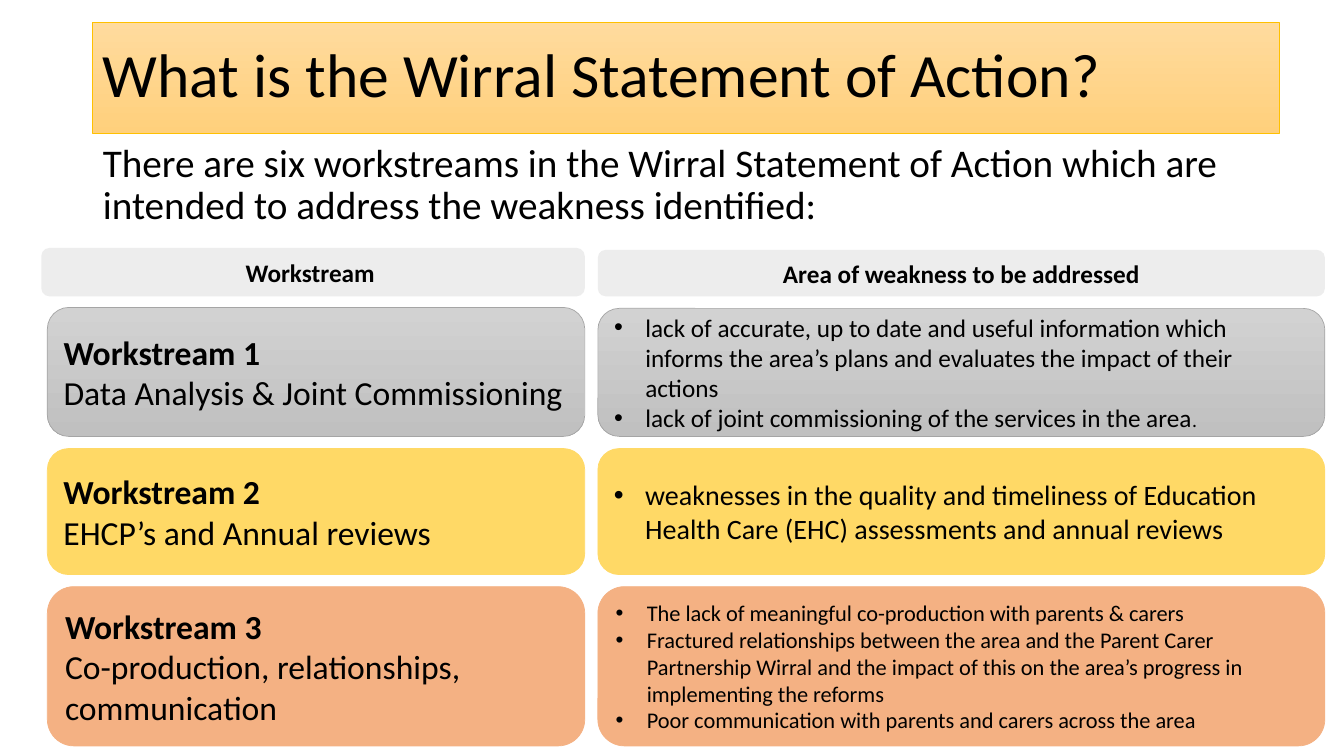
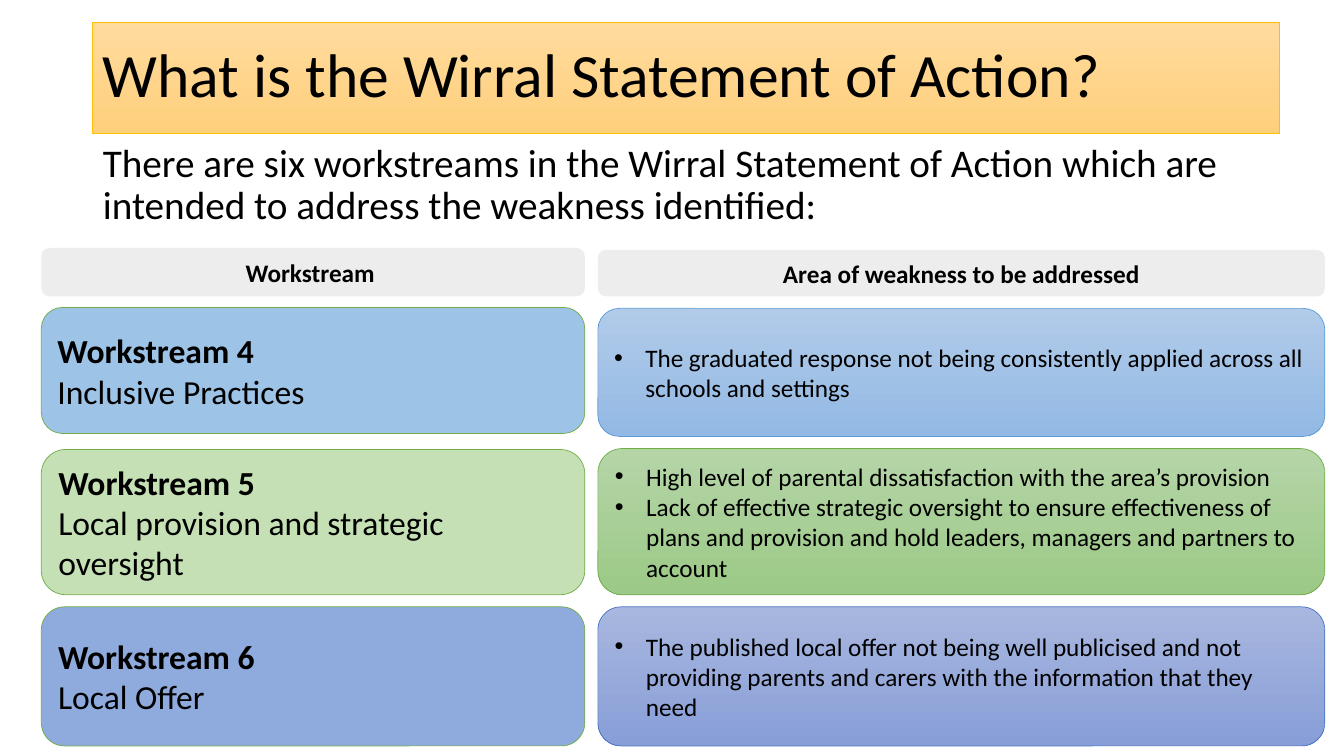
from dataclasses import dataclass

from lxml.etree import SubElement
from pptx import Presentation
from pptx.dml.color import RGBColor
from pptx.enum.shapes import MSO_SHAPE
from pptx.enum.text import MSO_ANCHOR, MSO_AUTO_SIZE, PP_ALIGN
from pptx.oxml.ns import qn
from pptx.util import Emu, Pt

# Scale: 100 px to the inch
EMU_PER_PX = 9144
PAGE_WIDTH, PAGE_HEIGHT = 1333, 750

FONT = "Calibri"
BLACK = RGBColor(0x00, 0x00, 0x00)
HEADER_GREY = RGBColor(0xED, 0xED, 0xED)
TITLE_TOP = RGBColor(0xFF, 0xDB, 0x9E)
TITLE_BOTTOM = RGBColor(0xFF, 0xD0, 0x7C)
GOLD = RGBColor(0xFF, 0xC0, 0x00)
GREY_LIGHT = RGBColor(0xD2, 0xD2, 0xD2)
GREY_DARK = RGBColor(0xC0, 0xC0, 0xC0)
GREY_LINE = RGBColor(0xA5, 0xA5, 0xA5)
YELLOW = RGBColor(0xFF, 0xD9, 0x66)
ORANGE = RGBColor(0xF4, 0xB1, 0x83)
SKY = RGBColor(0x9D, 0xC3, 0xE6)
SKY_LIGHT = RGBColor(0xB1, 0xCB, 0xE9)
SKY_DARK = RGBColor(0x93, 0xB9, 0xE4)
SKY_LINE = RGBColor(0x5B, 0x9B, 0xD5)
GREEN = RGBColor(0xC5, 0xE0, 0xB4)
GREEN_LIGHT = RGBColor(0xB5, 0xD5, 0xA7)
GREEN_DARK = RGBColor(0x9C, 0xC9, 0x87)
GREEN_LINE = RGBColor(0x70, 0xAD, 0x47)
INDIGO = RGBColor(0x8F, 0xAA, 0xDC)
INDIGO_LIGHT = RGBColor(0xA8, 0xB7, 0xDF)
INDIGO_DARK = RGBColor(0x88, 0x9E, 0xD7)
INDIGO_LINE = RGBColor(0x44, 0x72, 0xC4)

TITLE = "What is the Wirral Statement of Action?"
INTRO = ("There are six workstreams in the Wirral Statement of Action which are "
         "intended to address the weakness identified:")

# Column edges
HEADER_LEFT = 41
NAME_RIGHT = 580
WEAKNESS_LEFT, WEAKNESS_RIGHT = 593, 1314
BULLET_INDENT = 31


@dataclass(frozen=True)
class Card:
    top: int
    bottom: int
    fill: tuple[RGBColor, ...]  # one colour is solid, two are a gradient
    line: RGBColor | None = None


@dataclass(frozen=True)
class Workstream:
    number: int
    name: str
    name_card: Card
    weakness_card: Card
    weaknesses: tuple[str, ...]
    size: int = 18
    small_ending: str = ""


@dataclass(frozen=True)
class Page:
    name_left: int
    workstreams: tuple[Workstream, ...]


GREY_FILL = (GREY_LIGHT, GREY_DARK)
YELLOW_CARD = Card(445, 570, (YELLOW,), YELLOW)
ORANGE_CARD = Card(582, 740, (ORANGE,), ORANGE)
NAME_HEADER = Card(246, 294, (HEADER_GREY,))
WEAKNESS_HEADER = Card(248, 294, (HEADER_GREY,))

PAGES = (
    Page(47, (
        Workstream(
            1, "Data Analysis & Joint Commissioning",
            Card(305, 433, GREY_FILL, GREY_LINE), Card(306, 433, GREY_FILL, GREY_LINE),
            ("lack of accurate, up to date and useful information which informs the "
             "area’s plans and evaluates the impact of their actions",
             "lack of joint commissioning of the services in the area"),
            small_ending="."),
        Workstream(
            2, "EHCP’s and Annual reviews", YELLOW_CARD, YELLOW_CARD,
            ("weaknesses in the quality and timeliness of Education Health Care (EHC) "
             "assessments and annual reviews",),
            size=20),
        Workstream(
            3, "Co-production, relationships, communication", ORANGE_CARD, ORANGE_CARD,
            ("The lack of meaningful co-production with parents & carers",
             "Fractured relationships between the area and the Parent Carer Partnership "
             "Wirral and the impact of this on the area’s progress in implementing the reforms",
             "Poor communication with parents and carers across the area"),
            size=16),
    )),
    Page(HEADER_LEFT, (
        Workstream(
            4, "Inclusive Practices",
            Card(305, 430, (SKY,), GREEN_LINE),
            Card(306, 433, (SKY_LIGHT, SKY_DARK), SKY_LINE),
            ("The graduated response not being consistently applied across all schools "
             "and settings",)),
        Workstream(
            5, "Local provision and strategic oversight",
            Card(446, 590, (GREEN,), GREEN_LINE),
            Card(445, 590, (GREEN_LIGHT, GREEN_DARK), GREEN_LINE),
            ("High level of parental dissatisfaction with the area’s provision",
             "Lack of effective strategic oversight to ensure effectiveness of plans and "
             "provision and hold leaders, managers and partners to account")),
        Workstream(
            6, "Local Offer",
            Card(602, 740, (INDIGO,), GREEN_LINE),
            Card(602, 740, (INDIGO_LIGHT, INDIGO_DARK), INDIGO_LINE),
            ("The published local offer not being well publicised and not providing "
             "parents and carers with the information that they need",)),
    )),
)


def px(length: int) -> Emu:
    return Emu(length * EMU_PER_PX)


def place(box, left: int, top: int, width: int, height: int) -> None:
    box.left, box.top, box.width, box.height = map(px, (left, top, width, height))


def paint(box, colours: tuple[RGBColor, ...], line: RGBColor | None) -> None:
    if len(colours) == 1:
        box.fill.solid()
        box.fill.fore_color.rgb = colours[0]
    else:
        box.fill.gradient()
        box.fill.gradient_angle = 270
        for stop, colour in zip(box.fill.gradient_stops, colours):
            stop.color.rgb = colour
    if line is None:
        box.line.fill.background()
    else:
        box.line.color.rgb = line
        box.line.width = Pt(0.5)


def add_span(para, text: str, *, size: int, bold: bool = False) -> None:
    span = para.add_run()
    span.text = text
    span.font.name = FONT
    span.font.size = Pt(size)
    span.font.bold = bold
    span.font.color.rgb = BLACK


def write(box, text: str, *, size: int, bold: bool = False, first: bool = True,
          align: PP_ALIGN = PP_ALIGN.LEFT, line_spacing: float = 1.0,
          space_before: int = 0, bullet: bool = False):
    """Write one paragraph into a box and return it."""
    frame = box.text_frame
    para = frame.paragraphs[0] if first else frame.add_paragraph()
    para.alignment = align
    para.line_spacing = line_spacing
    para.space_before = Pt(space_before)
    indent = px(BULLET_INDENT) if bullet else 0
    properties = para._p.get_or_add_pPr()
    properties.set("marL", str(indent))
    properties.set("indent", str(-indent))
    if bullet:
        SubElement(properties, qn("a:buFont")).set("typeface", "Arial")
        SubElement(properties, qn("a:buChar")).set("char", "•")
    else:
        SubElement(properties, qn("a:buNone"))
    add_span(para, text, size=size, bold=bold)
    return para


def add_card(slide, card: Card, left: int, right: int):
    box = slide.shapes.add_shape(
        MSO_SHAPE.ROUNDED_RECTANGLE, px(left), px(card.top),
        px(right - left), px(card.bottom - card.top))
    box.shadow.inherit = False
    paint(box, card.fill, card.line)
    box.text_frame.word_wrap = True
    box.text_frame.vertical_anchor = MSO_ANCHOR.MIDDLE
    return box


def add_heading(slide) -> None:
    title, body = slide.shapes.title, slide.placeholders[1]
    place(title, 92, 22, 1177, 110)
    paint(title, (TITLE_TOP, TITLE_BOTTOM), GOLD)
    place(body, 92, 137, 1241, 476)
    for box, anchor in ((title, MSO_ANCHOR.MIDDLE), (body, MSO_ANCHOR.TOP)):
        box.text_frame.auto_size = MSO_AUTO_SIZE.NONE
        box.text_frame.vertical_anchor = anchor
    write(title, TITLE, size=44, line_spacing=0.9)
    write(body, INTRO, size=28, line_spacing=0.9, space_before=10)


def add_column_headers(slide) -> None:
    for text, card, left, right in (
        ("Workstream ", NAME_HEADER, HEADER_LEFT, NAME_RIGHT),
        ("Area of weakness to be addressed", WEAKNESS_HEADER, WEAKNESS_LEFT, WEAKNESS_RIGHT),
    ):
        write(add_card(slide, card, left, right), text, size=18, bold=True,
              align=PP_ALIGN.CENTER)


def add_workstream(slide, stream: Workstream, name_left: int) -> None:
    name_box = add_card(slide, stream.name_card, name_left, NAME_RIGHT)
    write(name_box, f"Workstream {stream.number}", size=24, bold=True)
    write(name_box, stream.name, size=24, first=False)

    weakness_box = add_card(slide, stream.weakness_card, WEAKNESS_LEFT, WEAKNESS_RIGHT)
    for index, weakness in enumerate(stream.weaknesses):
        para = write(weakness_box, weakness, size=stream.size, first=index == 0, bullet=True)
    if stream.small_ending:
        add_span(para, stream.small_ending, size=14)


def main() -> None:
    deck = Presentation()
    deck.slide_width, deck.slide_height = px(PAGE_WIDTH), px(PAGE_HEIGHT)
    for page in PAGES:
        slide = deck.slides.add_slide(deck.slide_layouts[1])
        add_heading(slide)
        add_column_headers(slide)
        for stream in page.workstreams:
            add_workstream(slide, stream, page.name_left)
    deck.save("out.pptx")


if __name__ == "__main__":
    main()
